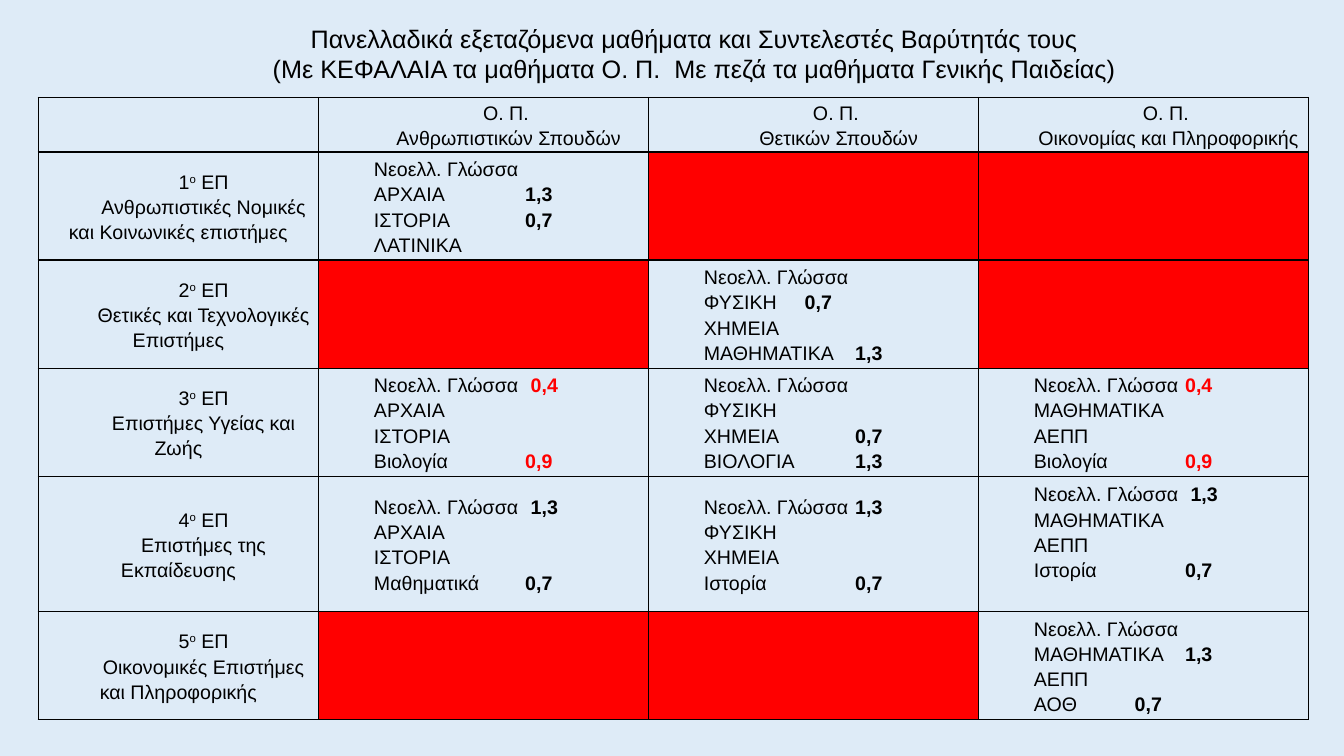
from lxml import etree
from pptx import Presentation
from pptx.dml.color import RGBColor
from pptx.enum.text import MSO_ANCHOR, MSO_AUTO_SIZE, PP_ALIGN
from pptx.oxml.ns import qn
from pptx.util import Inches, Pt

TOP, MIDDLE = MSO_ANCHOR.TOP, MSO_ANCHOR.MIDDLE
CENTER, LEFT = PP_ALIGN.CENTER, PP_ALIGN.LEFT
FIT = MSO_AUTO_SIZE.NONE

theme = {
    "back": RGBColor.from_string("DEEBF7"),
    "ink": RGBColor.from_string("000000"),
    "red": RGBColor.from_string("FF0000"),
    "face": "Arial",
    "head": Pt(18),
    "body": Pt(14),
    "rule": Pt(1),
}
WIDE, TALL = Inches(13.33), Inches(7.5)
COL, ROW = WIDE / 100, TALL / 100

HEADS = ["Ανθρωπιστικών Σπουδών", "Θετικών Σπουδών", "Οικονομίας και Πληροφορικής"]
FIELDS = [
    "Ανθρωπιστικές Νομικές και Κοινωνικές επιστήμες",
    "Θετικές και Τεχνολογικές Επιστήμες",
    "Επιστήμες Υγείας και Ζωής",
    "Επιστήμες της Εκπαίδευσης",
    "Οικονομικές Επιστήμες και Πληροφορικής",
]
COURSES = {
    (1, 1): ["Νεοελλ. Γλώσσα", "ΑΡΧΑΙΑ \t\t1,3", "ΙΣΤΟΡΙΑ \t\t0,7", "ΛΑΤΙΝΙΚΑ"],
    (2, 2): ["Νεοελλ. Γλώσσα", "ΦΥΣΙΚΗ \t0,7", "ΧΗΜΕΙΑ", "ΜΑΘΗΜΑΤΙΚΑ\t1,3"],
    (3, 1): ["Νεοελλ. Γλώσσα\t 0,4", "ΑΡΧΑΙΑ", "ΙΣΤΟΡΙΑ", "Βιολογία \t\t0,9"],
    (3, 2): ["Νεοελλ. Γλώσσα", "ΦΥΣΙΚΗ", "ΧΗΜΕΙΑ\t\t0,7", "ΒΙΟΛΟΓΙΑ \t\t1,3"],
    (3, 3): ["Νεοελλ. Γλώσσα\t0,4", "ΜΑΘΗΜΑΤΙΚΑ", "ΑΕΠΠ", "Βιολογία\t\t0,9"],
    (4, 1): ["Νεοελλ. Γλώσσα\t 1,3", "ΑΡΧΑΙΑ", "ΙΣΤΟΡΙΑ", "Μαθηματικά \t0,7"],
    (4, 2): ["Νεοελλ. Γλώσσα \t1,3", "ΦΥΣΙΚΗ", "ΧΗΜΕΙΑ", "Ιστορία\t\t0,7"],
    (4, 3): ["Νεοελλ. Γλώσσα\t 1,3", "ΜΑΘΗΜΑΤΙΚΑ", "ΑΕΠΠ", "Ιστορία\t\t0,7"],
    (5, 3): ["Νεοελλ. Γλώσσα", "ΜΑΘΗΜΑΤΙΚΑ\t1,3", "ΑΕΠΠ", "ΑΟΘ\t\t0,7"],
}
STOPS = {
    (2, 2): [1.34, 1.47, 1.55],
    (3, 2): [1.34, 1.47, 1.55],
    (4, 2): [1.48],
    (5, 3): [1.57],
}
LOW = {"0,4", "0,9"}


def write(par, text, size="body", tint="ink", bold=False):
    run = par.add_run()
    run.text = text
    form = {"name": theme["face"], "size": theme[size], "bold": bold}
    for key, value in form.items():
        setattr(run.font, key, value)
    run.font.color.rgb = theme[tint]
    return run


def start(frame, index, align):
    par = frame.paragraphs[0] if index == 0 else frame.add_paragraph()
    par.alignment = align
    par.line_spacing = 1.15
    props = par._p.get_or_add_pPr()
    props.set("marL", "0")
    props.set("indent", str(Inches(0.5)))
    return par


deck = Presentation()
deck.slide_width, deck.slide_height = WIDE, TALL
slide = deck.slides.add_slide(deck.slide_layouts[5])
slide.background.fill.solid()
slide.background.fill.fore_color.rgb = theme["back"]

title = slide.shapes.title
place = {"left": 8.55 * COL, "top": 2.4 * ROW, "width": 86.2 * COL, "height": 9.4 * ROW}
for key, value in place.items():
    setattr(title, key, int(value))
frame = title.text_frame
for key, value in {"word_wrap": True, "auto_size": FIT, "vertical_anchor": TOP}.items():
    setattr(frame, key, value)
lines = [
    "Πανελλαδικά εξεταζόμενα μαθήματα και Συντελεστές Βαρύτητάς τους",
    "(Με ΚΕΦΑΛΑΙΑ τα μαθήματα Ο. Π.  Με πεζά τα μαθήματα Γενικής Παιδείας)",
]
for i, line in enumerate(lines):
    par = frame.paragraphs[0] if i == 0 else frame.add_paragraph()
    par.alignment = CENTER
    write(par, line, "head")

widths = [20.85] + [24.55] * 3
heights = [7.2] + [14.3] * 3 + [17.9, 14.3]
grid = slide.shapes.add_table(
    len(heights), len(widths), int(2.85 * COL), int(12.9 * ROW),
    int(sum(widths) * COL), int(sum(heights) * ROW),
).table
grid.first_row = grid.horz_banding = False
for column, share in zip(grid.columns, widths):
    column.width = int(share * COL)
for band, share in zip(grid.rows, heights):
    band.height = int(share * ROW)

layout = {
    "vertical_anchor": MIDDLE,
    "margin_left": Inches(0.05),
    "margin_right": Inches(0.05),
    "margin_top": 0,
    "margin_bottom": 0,
}
for r in range(len(heights)):
    for c in range(len(widths)):
        cell = grid.cell(r, c)
        for key, value in layout.items():
            setattr(cell, key, value)
        props = cell._tc.get_or_add_tcPr()
        for side in ("a:lnL", "a:lnR", "a:lnT", "a:lnB"):
            edge = etree.SubElement(props, qn(side), w=str(theme["rule"]))
            fill = etree.SubElement(edge, qn("a:solidFill"))
            etree.SubElement(fill, qn("a:srgbClr"), val=str(theme["ink"]))
        if r and c and (r, c) not in COURSES:
            cell.fill.solid()
            cell.fill.fore_color.rgb = theme["red"]
        else:
            cell.fill.background()

for c, name in enumerate(HEADS, 1):
    frame = grid.cell(0, c).text_frame
    for i, line in enumerate(["Ο. Π. ", name]):
        write(start(frame, i, CENTER), line)

for r, name in enumerate(FIELDS, 1):
    frame = grid.cell(r, 0).text_frame
    par = start(frame, 0, CENTER)
    write(par, str(r))
    write(par, "ο")._r.get_or_add_rPr().set("baseline", "30000")
    write(par, " ΕΠ")
    write(start(frame, 1, CENTER), name)

for spot, lines in COURSES.items():
    frame = grid.cell(*spot).text_frame
    for i, line in enumerate(lines):
        par = start(frame, i, LEFT)
        tabs = etree.SubElement(par._p.get_or_add_pPr(), qn("a:tabLst"))
        for stop in STOPS.get(spot, [1.55]):
            etree.SubElement(tabs, qn("a:tab"), pos=str(Inches(stop)), algn="r")
        name, tab, weight = line.rpartition("\t")
        write(par, name + tab if tab else line)
        if tab:
            write(par, weight, tint="red" if weight.strip() in LOW else "ink", bold=True)
grid.cell(4, 3).margin_bottom = Inches(0.25)

deck.save("out.pptx")
